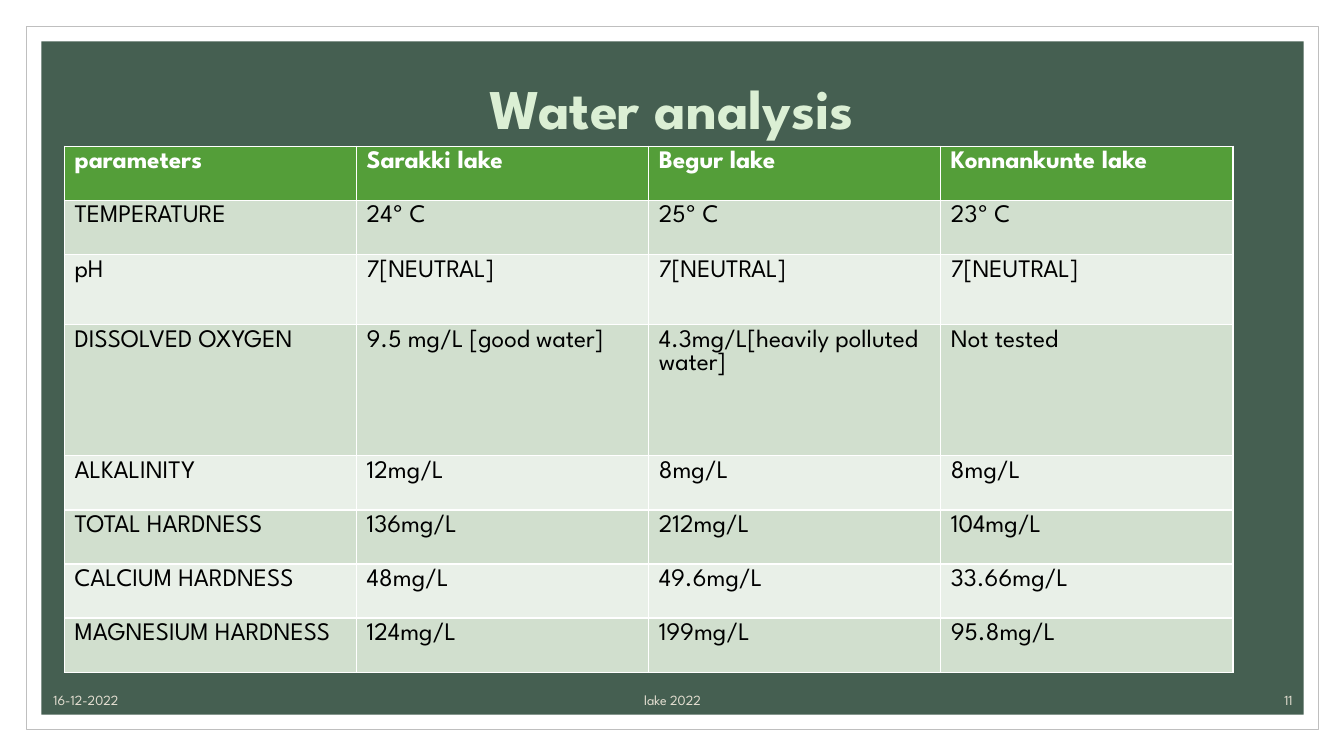
from lxml import etree
from pptx import Presentation
from pptx.dml.color import RGBColor
from pptx.enum.dml import MSO_PATTERN
from pptx.enum.shapes import MSO_SHAPE
from pptx.enum.text import MSO_ANCHOR as ANCHOR, PP_ALIGN as ALIGN
from pptx.oxml import parse_xml
from pptx.oxml.ns import nsdecls
from pptx.util import Inches, Pt

WHITE, GREEN, PANEL = "FFFFFF", "549E39", "455F51"
BANDS = ("D1DFCE", "E9F0E8")


def rgb(value):
    return RGBColor.from_string(value)


def write(tf, text, size=18, color="000000", bold=False, align=ALIGN.LEFT,
          anchor=ANCHOR.TOP, font="League Spartan"):
    """Put one formatted run in a text frame and return the run."""
    tf.word_wrap = True
    tf.vertical_anchor = anchor
    p = tf.paragraphs[0]
    p.alignment = align
    r = p.add_run()
    r.text = text
    r.font.name, r.font.size, r.font.bold = font, Pt(size), bold
    r.font.color.rgb = rgb(color)
    return r


class Deck:
    """Slide builder; lengths are percentages of the slide's width and height."""

    def __init__(self, width=13.33, height=7.5):
        self.prs = Presentation()
        self.prs.slide_width, self.prs.slide_height = Inches(width), Inches(height)
        self.slide = self.prs.slides.add_slide(self.prs.slide_layouts[5])
        self.shapes = self.slide.shapes

    def x(self, share):
        return round(self.prs.slide_width * share / 100)

    def y(self, share):
        return round(self.prs.slide_height * share / 100)

    def box(self, left, top, width, height):
        return self.x(left), self.y(top), self.x(width), self.y(height)

    def rect(self, at, fill, line=None, weight=0.5):
        sp = self.shapes.add_shape(MSO_SHAPE.RECTANGLE, *self.box(*at))
        sp.shadow.inherit = False
        sp.fill.solid()
        sp.fill.fore_color.rgb = rgb(fill)
        if line:
            sp.line.color.rgb = rgb(line)
            sp.line.width = Pt(weight)
        else:
            sp.line.fill.background()

    def title(self, at, text, fore, back):
        sp = self.shapes.title
        sp.left, sp.top, sp.width, sp.height = self.box(*at)
        r = write(sp.text_frame, text, size=40, bold=True,
                  align=ALIGN.CENTER, anchor=ANCHOR.BOTTOM)
        # Patterned letters with a thin outline
        r.font.fill.patterned()
        r.font.fill.pattern = MSO_PATTERN.PERCENT_50
        r.font.fill.fore_color.rgb = rgb(fore)
        r.font.fill.back_color.rgb = rgb(back)
        outline = parse_xml(f'<a:ln {nsdecls("a")} w="{Pt(1)}"/>')
        fill = etree.SubElement(outline, outline.tag.replace("}ln", "}solidFill"))
        etree.SubElement(fill, outline.tag.replace("}ln", "}srgbClr"), val=fore)
        r.font._element.insert(0, outline)
        # Bring the title in front of the frame
        sp._element.getparent().append(sp._element)

    def footer(self, left, width, text, align):
        sp = self.shapes.add_textbox(*self.box(left, 90.67, width, 3.73))
        write(sp.text_frame, text, size=10, color="E3DED1",
              align=align, anchor=ANCHOR.BOTTOM)

    def table(self, at, rows, heights):
        frame = self.shapes.add_table(len(rows), len(rows[0]),
                                      *self.box(*at, sum(heights)))
        table = frame.table
        for i, (row, height) in enumerate(zip(rows, heights)):
            table.rows[i].height = self.y(height)
            head = i == 0
            for j, text in enumerate(row):
                cell = table.cell(i, j)
                cell.fill.solid()
                cell.fill.fore_color.rgb = rgb(GREEN if head else BANDS[(i - 1) % 2])
                write(cell.text_frame, text, bold=head,
                      color=WHITE if head else "000000")


ANALYSIS = [
    ("parameters", "Sarakki lake", "Begur lake", "Konnankunte lake"),
    ("TEMPERATURE", "24º C", "25º C", "23º C"),
    ("pH", "7[NEUTRAL]", "7[NEUTRAL]", "7[NEUTRAL]"),
    ("DISSOLVED OXYGEN", "9.5 mg/L [good water]",
     "4.3mg/L[heavily polluted water]", "Not tested"),
    ("ALKALINITY", "12mg/L", "8mg/L", "8mg/L"),
    ("TOTAL HARDNESS", "136mg/L", "212mg/L", "104mg/L"),
    ("CALCIUM HARDNESS", "48mg/L", "49.6mg/L", "33.66mg/L"),
    ("MAGNESIUM HARDNESS", "124mg/L", "199mg/L", "95.8mg/L"),
]


def main():
    deck = Deck()

    # Frame and panel
    deck.rect((1.95, 3.47, 96.17, 93.07), WHITE, line="BFBFBF")
    deck.rect((3.08, 5.47, 93.92, 89.07), PANEL)

    # Title
    deck.title((6, 9.07, 87.92, 10.27), "Water analysis", GREEN, "DBEFD4")

    # Footer
    deck.footer(28.66, 42.76, "lake 2022", ALIGN.CENTER)
    deck.footer(84.92, 12, "11", ALIGN.RIGHT)
    deck.footer(3.23, 22.5, "16-12-2022", ALIGN.LEFT)

    # Measurements, with taller rows for pH and oxygen
    row = 7.16
    deck.table((4.8, 19.33, 86.95), ANALYSIS,
               [row, row, 9.33, 17.33] + [row] * 4)

    deck.prs.save("out.pptx")


if __name__ == "__main__":
    main()
